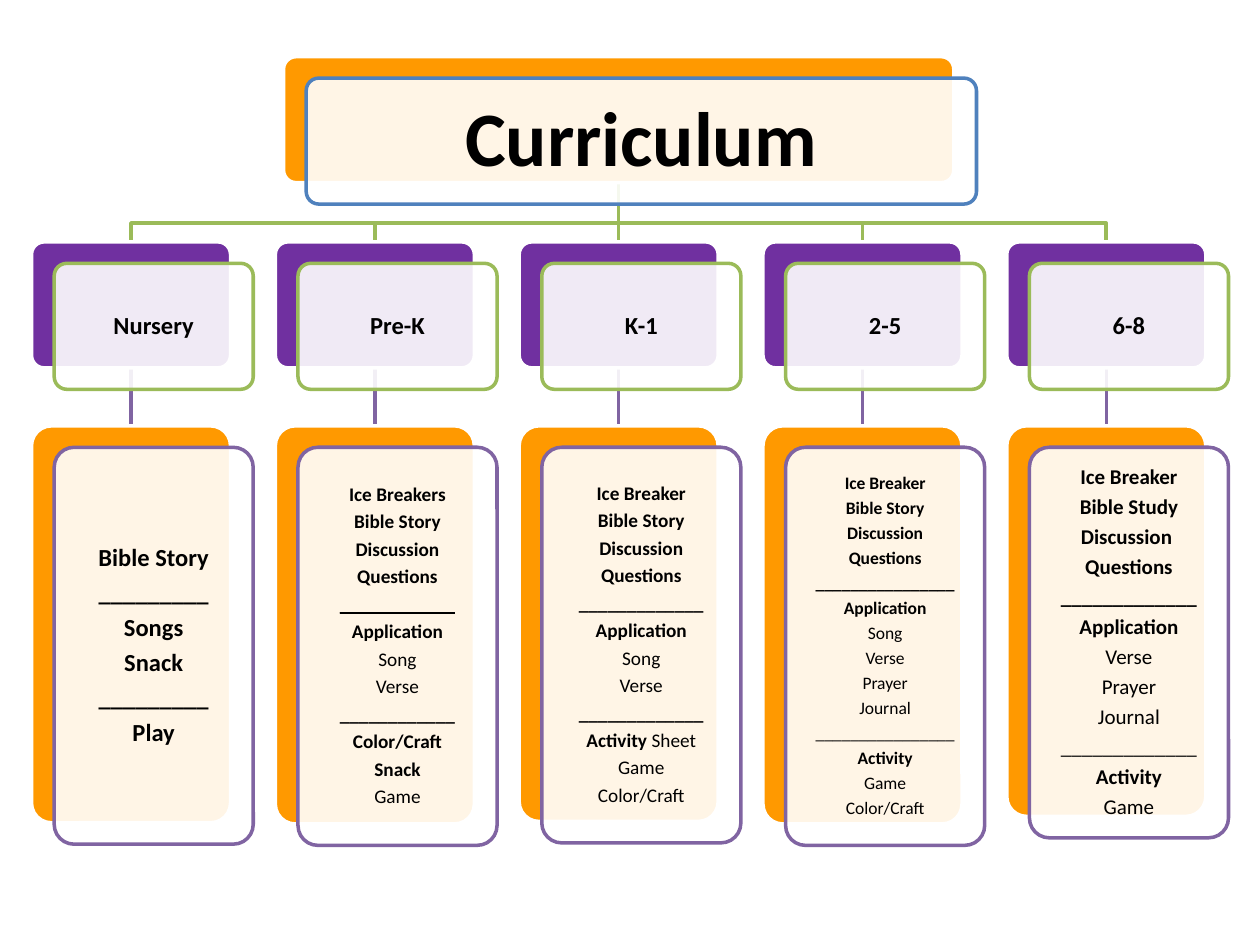
from lxml.etree import SubElement
from pptx import Presentation
from pptx.dml.color import RGBColor
from pptx.enum.shapes import MSO_CONNECTOR, MSO_SHAPE
from pptx.enum.text import MSO_ANCHOR, PP_ALIGN
from pptx.oxml.ns import qn
from pptx.util import Inches, Pt

COLORS = {
    "white": "FFFFFF",
    "black": "000000",
    "orange": "FF9900",
    "purple": "7030A0",
    "blue": "4F81BD",
    "green": "9BBB59",
    "violet": "8064A2",
}
FONT = "Calibri"
PANEL_OFFSET = 0.17
TITLE_BOX = (2.25, 0.45, 5.32, 1)
COLUMN_LEFT, COLUMN_WIDTH = 0.25, 1.58
COLUMN_PITCH = (7.99 - COLUMN_LEFT) / 4
HEADER_TOP, HEADER_HEIGHT = 1.92, 1
LESSON_TOP = 3.38
BRANCH_TOP = 1.77

GRADES = [
    {"name": "Nursery", "height": 3.15, "size": 14, "inset": 0.06, "lines": [
        "**Bible Story**", "**_________**", "**Songs**", "**Snack**",
        "**_________**", "**Play**"]},
    {"name": "Pre-K", "height": 3.16, "size": 11, "inset": 0.05, "underlined": 4, "lines": [
        "**Ice Breakers**", "**Bible Story**", "**Discussion**", "**Questions**",
        "**____________**", "**Application**", "Song", "Verse",
        "**____________**", "**Color/Craft**", "**Snack**", "Game"]},
    {"name": "K-1", "height": 3.14, "size": 11, "inset": 0.05, "lines": [
        "**Ice Breaker**", "**Bible Story**", "**Discussion**", "**Questions**",
        "**_____________**", "**Application**", "Song", "Verse",
        "**_____________**", "**Activity** Sheet", "Game", "Color/Craft"]},
    {"name": "2-5", "height": 3.16, "size": 10, "inset": 0.04, "lines": [
        "**Ice Breaker**", "**Bible Story**", "**Discussion**", "**Questions**",
        "**________________**", "**Application**", "Song", "Verse", "Prayer", "Journal",
        "________________", "**Activity**", "Game", "Color/Craft"]},
    {"name": "6-8", "height": 3.1, "size": 12, "inset": 0.05, "lines": [
        "**Ice Breaker**", "**Bible Study**", "**Discussion **", "**Questions**",
        "**_____________**", "**Application**", "Verse", "Prayer", "Journal",
        "_____________", "**Activity**", "Game"]},
]


def rgb(name):
    return RGBColor.from_string(COLORS[name])


def set_line(shape, color):
    shape.line.color.rgb = rgb(color)
    shape.line.width = Pt(2)


def write_text(shape, lines, size, inset, underlined=None):
    frame = shape.text_frame
    frame.word_wrap = True
    frame.vertical_anchor = MSO_ANCHOR.MIDDLE
    frame.margin_left = frame.margin_right = Inches(inset)
    frame.margin_top = frame.margin_bottom = Inches(inset)
    for index, line in enumerate(lines):
        paragraph = frame.add_paragraph() if index else frame.paragraphs[0]
        paragraph.alignment = PP_ALIGN.CENTER
        paragraph.line_spacing = 0.9
        paragraph.space_after = Pt(0.35 * size)
        for position, part in enumerate(line.split("**")):
            if part:
                run = paragraph.add_run()
                run.text = part
                run.font.name = FONT
                run.font.size = Pt(size)
                run.font.bold = position % 2 == 1
                run.font.underline = index == underlined
                run.font.color.rgb = rgb("black")


def add_rounded(slide, box, fill, line):
    shape = slide.shapes.add_shape(
        MSO_SHAPE.ROUNDED_RECTANGLE, *(Inches(length) for length in box))
    shape.adjustments[0] = 0.1
    shape.shadow.inherit = False
    shape.fill.solid()
    shape.fill.fore_color.rgb = rgb(fill)
    set_line(shape, line)
    return shape


def add_card(slide, box, fill, outline, lines, **text_format):
    left, top, width, height = box
    add_rounded(slide, box, fill, "white")
    panel_box = (left + PANEL_OFFSET + 0.01, top + PANEL_OFFSET, width, height)
    panel = add_rounded(slide, panel_box, "white", outline)
    color = panel.fill._xPr.find(qn("a:solidFill"))[0]
    SubElement(color, qn("a:alpha"), val="90000")
    write_text(panel, lines, **text_format)


def add_straight(slide, x, top, bottom, color):
    connector = slide.shapes.add_connector(
        MSO_CONNECTOR.STRAIGHT, Inches(x), Inches(top), Inches(x), Inches(bottom))
    set_line(connector, color)
    SubElement(connector._element.spPr, qn("a:effectLst"))


def add_branch(slide, start, end, color):
    points = [(start[0], BRANCH_TOP), (end[0], BRANCH_TOP), end]
    builder = slide.shapes.build_freeform(Inches(start[0]), Inches(start[1]))
    builder.add_line_segments([(Inches(x), Inches(y)) for x, y in points], close=False)
    branch = builder.convert_to_shape()
    branch.fill.background()
    branch.shadow.inherit = False
    set_line(branch, color)


def add_connections(slide, lefts):
    title_left, title_top, title_width, title_height = TITLE_BOX
    root = (title_left + title_width / 2, title_top + title_height + 0.01)
    for index, left in reversed(list(enumerate(lefts))):
        x = left + COLUMN_WIDTH / 2
        add_straight(slide, x, HEADER_TOP + HEADER_HEIGHT, LESSON_TOP, "violet")
        if index == len(lefts) // 2:
            add_straight(slide, x, root[1], HEADER_TOP, "green")
        else:
            add_branch(slide, root, (x, HEADER_TOP), "green")


def add_grade(slide, left, grade):
    add_card(slide, (left, HEADER_TOP, COLUMN_WIDTH, HEADER_HEIGHT), "purple", "green",
             [f"**{grade['name']}**"], size=14, inset=0.06)
    add_card(slide, (left, LESSON_TOP, COLUMN_WIDTH, grade["height"]), "orange", "violet",
             grade["lines"], size=grade["size"], inset=grade["inset"],
             underlined=grade.get("underlined"))


def main():
    presentation = Presentation()
    presentation.slide_width = Inches(10)
    presentation.slide_height = Inches(7.5)
    slide = presentation.slides.add_slide(presentation.slide_layouts[6])
    lefts = [COLUMN_LEFT + index * COLUMN_PITCH for index in range(len(GRADES))]
    add_connections(slide, lefts)
    add_card(slide, TITLE_BOX, "orange", "blue", ["**Curriculum**"], size=44, inset=0.18)
    for left, grade in zip(lefts, GRADES):
        add_grade(slide, left, grade)
    presentation.save("out.pptx")


if __name__ == "__main__":
    main()
